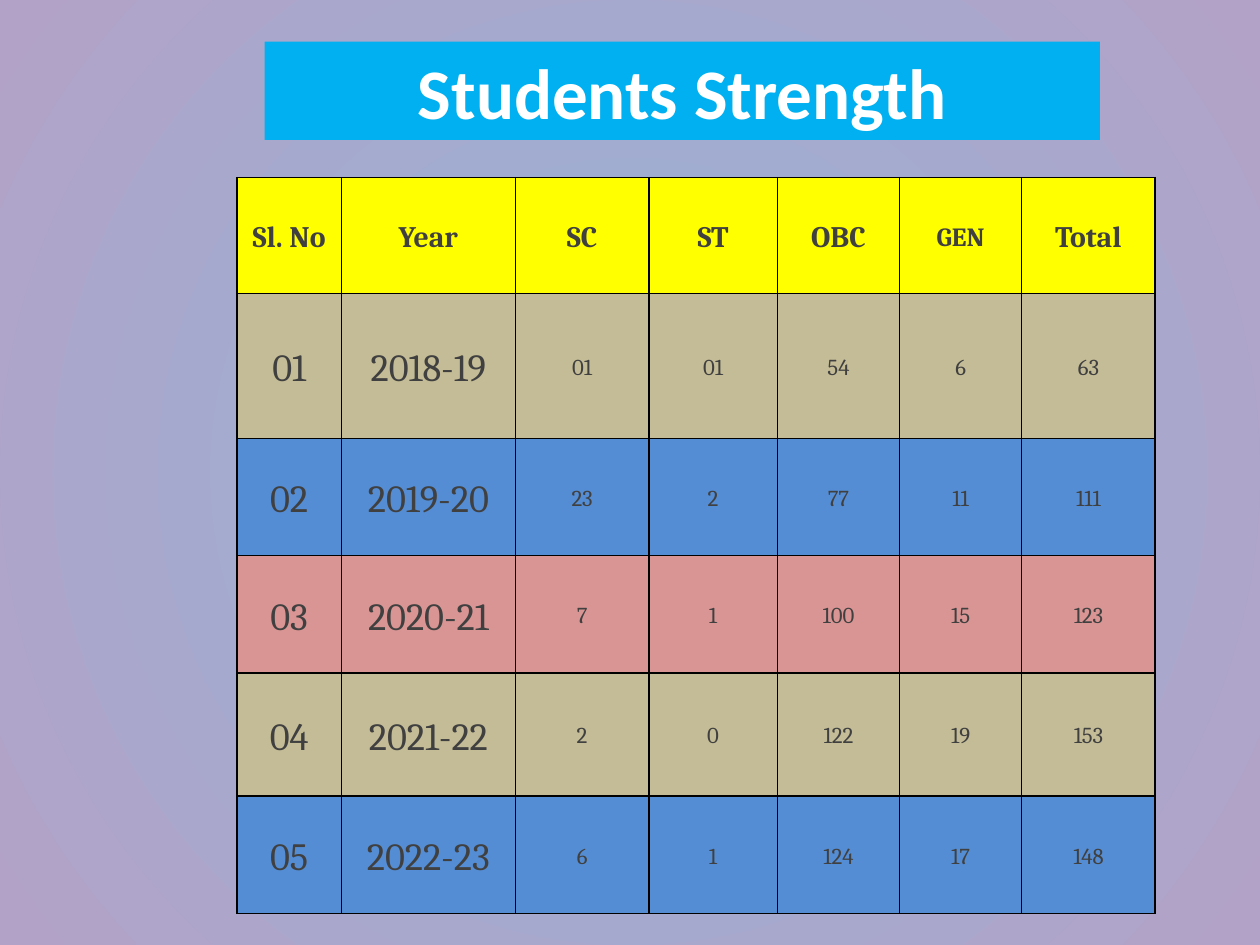
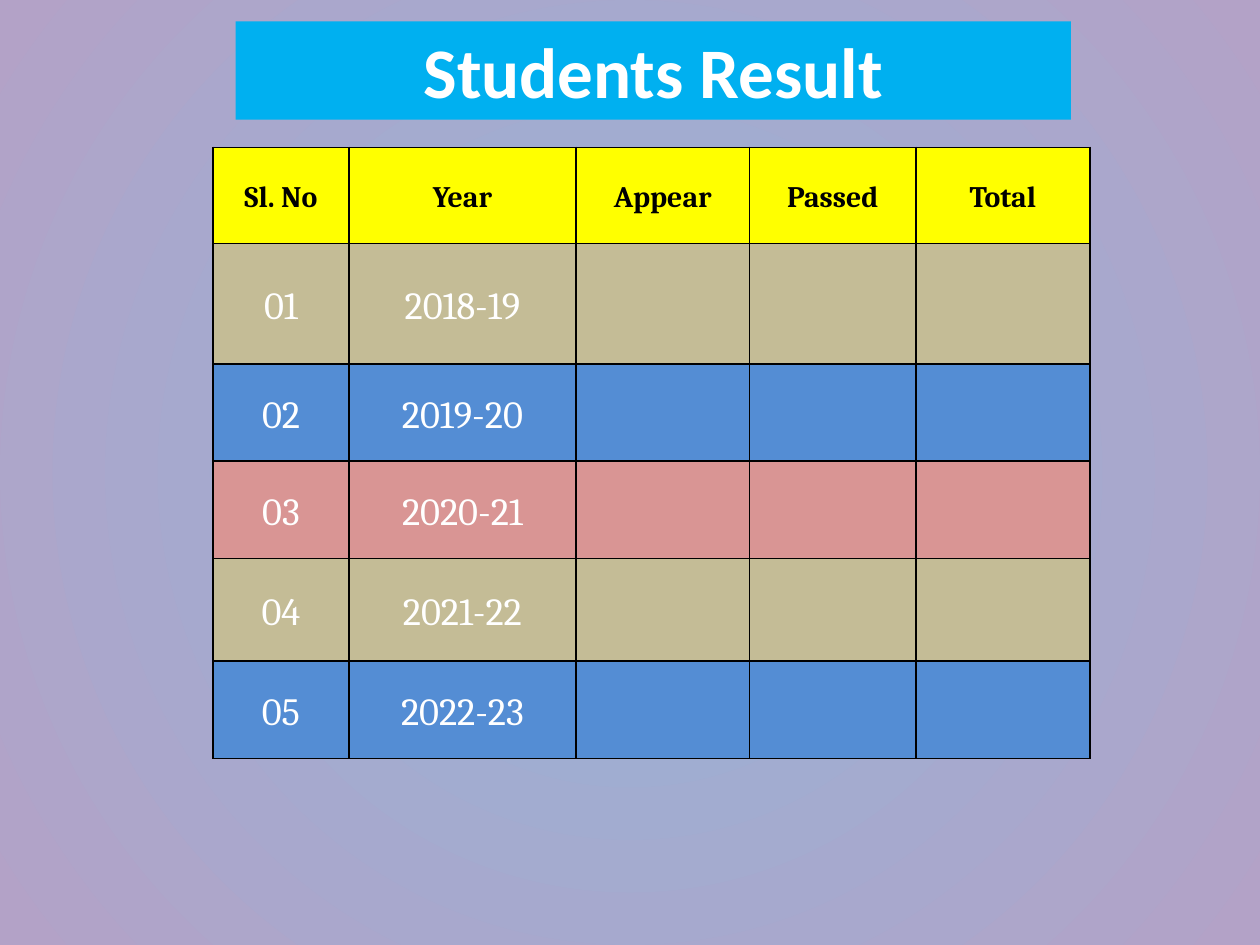
from dataclasses import dataclass

from lxml import etree
from pptx import Presentation
from pptx.dml.color import RGBColor
from pptx.enum.text import MSO_ANCHOR, MSO_AUTO_SIZE, PP_ALIGN
from pptx.oxml.ns import qn
from pptx.util import Inches, Pt

CENTER = PP_ALIGN.CENTER
MIDDLE = MSO_ANCHOR.MIDDLE
NO_AUTOFIT = MSO_AUTO_SIZE.NONE
TITLE_ONLY = 5

# The slide is a grid of 100 columns by 75 rows of square units
GRID_COLUMNS, GRID_ROWS = 100, 75
UNIT = Inches(0.1)
TITLE_SIZE = (66.3, 7.8)
# Relative row heights, the same in both tables
ROW_SHARES = (0.92, 1.15, 0.93, 0.93, 0.98, 0.93)
YEARS = ("2018-19", "2019-20", "2020-21", "2021-22", "2022-23")


@dataclass(frozen=True)
class Theme:
    title_font: str = "Calibri"
    table_font: str = "Cambria"
    title_size: float = 40.6
    header_size: int = 17
    small_header_size: int = 15
    label_size: int = 22
    figure_size: int = 13
    center: str = "95B3D7"
    edge: str = "B3A2C7"
    band: str = "00B0F0"
    header: str = "FFFF00"
    rows: tuple = ("C4BC96", "548DD4", "D99594")
    white: str = "FFFFFF"
    black: str = "000000"
    gray: str = "404040"
    border_width: int = 1


THEME = Theme()


def rgb(color):
    return RGBColor.from_string(color)


def units(count):
    return round(count * UNIT)


def paint(target, color):
    target.fill.solid()
    target.fill.fore_color.rgb = rgb(color)


def add_text(para, text, font, size, color, bold=False):
    para.alignment = CENTER
    span = para.add_run()
    span.text = text
    span.font.name = font
    span.font.size = Pt(size)
    span.font.bold = bold
    span.font.color.rgb = rgb(color)


def set_background(master):
    """Radial gradient behind every slide."""
    fill = master.background.fill
    fill.gradient()
    for stop, position, color in zip(fill.gradient_stops, (0, 1),
                                     (THEME.center, THEME.edge)):
        stop.position = position
        stop.color.rgb = rgb(color)
    linear = next(master.element.iter(qn("a:lin")))
    gradient = linear.getparent()
    gradient.remove(linear)
    circle = etree.SubElement(gradient, qn("a:path"), path="circle")
    etree.SubElement(circle, qn("a:fillToRect"),
                     {side: "50000" for side in "ltrb"})


def add_page(deck, title, left, top):
    """Title-only page with the title on a bright band."""
    page = deck.slides.add_slide(deck.slide_layouts[TITLE_ONLY])
    band = page.shapes.title
    band.left, band.top = units(left), units(top)
    band.width, band.height = map(units, TITLE_SIZE)
    paint(band, THEME.band)
    frame = band.text_frame
    frame.auto_size = NO_AUTOFIT
    frame.word_wrap = True
    frame.vertical_anchor = MIDDLE
    add_text(frame.paragraphs[0], title, THEME.title_font, THEME.title_size,
             THEME.white, bold=True)
    return page


def add_borders(cell):
    properties = cell._tc.get_or_add_tcPr()
    for side in ("a:lnL", "a:lnR", "a:lnT", "a:lnB"):
        line = etree.SubElement(properties, qn(side),
                                w=str(Pt(THEME.border_width)))
        solid = etree.SubElement(line, qn("a:solidFill"))
        etree.SubElement(solid, qn("a:srgbClr"), val=THEME.black)


def fill_cell(cell, text, fill, size, color, bold):
    add_borders(cell)
    paint(cell, fill)
    cell.vertical_anchor = MIDDLE
    cell.margin_left = cell.margin_right = Inches(0.04)
    cell.margin_top = cell.margin_bottom = 0
    if text:
        para = cell.text_frame.paragraphs[0]
        para.line_spacing = 1.15
        add_text(para, text, THEME.table_font, size, color, bold)


def text_size(row, column, text):
    if row == 0:
        return THEME.small_header_size if text == "GEN" else THEME.header_size
    return THEME.label_size if column < 2 else THEME.figure_size


def add_year_table(page, left, top, height, widths, headings, figures,
                   header_color, body_color):
    """One numbered row per year, under a yellow heading row."""
    records = [headings]
    for number, (year, values) in enumerate(zip(YEARS, figures), start=1):
        records.append((f"{number:02}", year, *values))
    table = page.shapes.add_table(
        len(records), len(headings), units(left), units(top),
        units(sum(widths)), units(height)).table
    table.first_row = table.horz_banding = False

    for column, width in zip(table.columns, widths):
        column.width = units(width)
    for row, share in zip(table.rows, ROW_SHARES):
        row.height = units(height * share / sum(ROW_SHARES))

    for row, record in enumerate(records):
        is_header = row == 0
        fill = THEME.header if is_header else THEME.rows[(row - 1) % len(THEME.rows)]
        color = header_color if is_header else body_color
        for column, text in enumerate(record):
            fill_cell(table.cell(row, column), text, fill,
                      text_size(row, column, text), color, is_header)


def main():
    deck = Presentation()
    deck.slide_width = GRID_COLUMNS * UNIT
    deck.slide_height = GRID_ROWS * UNIT
    set_background(deck.slide_master)

    # Students by category
    strength = add_page(deck, "Students Strength", 21, 3.3)
    add_year_table(
        strength, left=18.8, top=14.1, height=58.4,
        widths=(8.3, 13.8, 10.6, 10.2, 9.7, 9.7, 10.6),
        headings=("Sl. No", "Year", "SC", "ST", "OBC", "GEN", "Total"),
        figures=(("01", "01", "54", "6", "63"),
                 ("23", "2", "77", "11", "111"),
                 ("7", "1", "100", "15", "123"),
                 ("2", "0", "122", "19", "153"),
                 ("6", "1", "124", "17", "148")),
        header_color=THEME.gray, body_color=THEME.gray)

    # Exam results, with the figures still open
    result = add_page(deck, "Students Result", 18.7, 1.7)
    add_year_table(
        result, left=16.9, top=11.7, height=48.5,
        widths=(10.8, 18, 13.8, 13.2, 13.8),
        headings=("Sl. No", "Year", "Appear", "Passed", "Total"),
        figures=[("", "", "")] * len(YEARS),
        header_color=THEME.black, body_color=THEME.white)

    deck.save("out.pptx")


if __name__ == "__main__":
    main()
